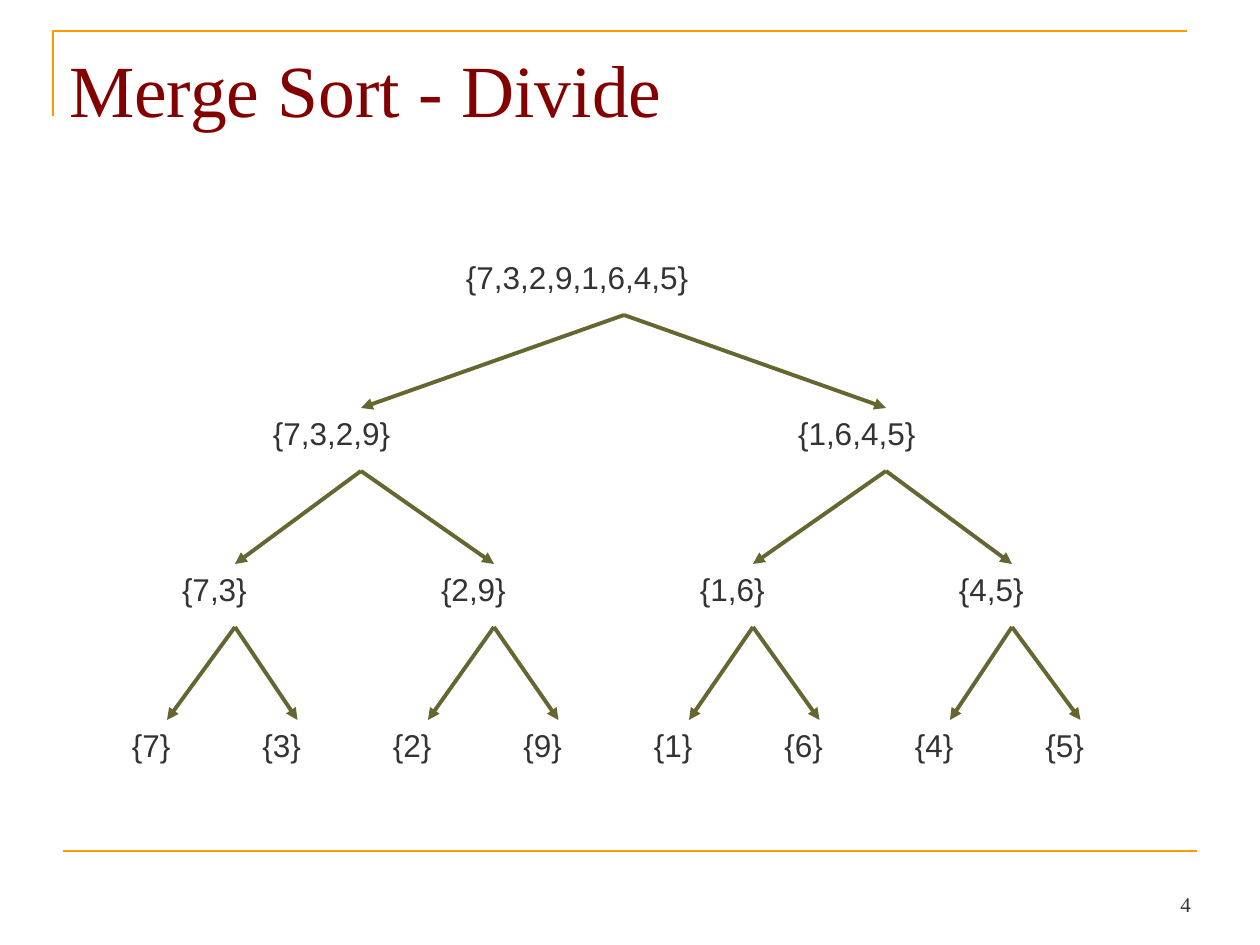
from dataclasses import dataclass

from lxml.etree import SubElement
from pptx import Presentation
from pptx.dml.color import RGBColor
from pptx.enum.shapes import MSO_CONNECTOR
from pptx.enum.text import MSO_ANCHOR, MSO_AUTO_SIZE, PP_ALIGN
from pptx.oxml.ns import qn
from pptx.shapes.connector import Connector
from pptx.slide import Slide
from pptx.text.text import TextFrame
from pptx.util import Emu, Pt

PX_PER_INCH = 126
ORANGE = RGBColor(0xFF, 0x99, 0x00)
MAROON = RGBColor(0x82, 0x00, 0x00)
CHARCOAL = RGBColor(0x33, 0x33, 0x33)
OLIVE = RGBColor(0x66, 0x66, 0x33)

NUMBERS = [7, 3, 2, 9, 1, 6, 4, 5]
FIRST_ROW_TOP = 252
ROW_STEP = 156
ROW_HEIGHT = 48
ARROW_DROP = 63


@dataclass(frozen=True)
class Level:
    group_size: int
    left: int
    joint: int
    step: float
    width: int


LEVELS = [
    Level(8, 460, 624, 0, 237),
    Level(4, 267, 361, 525, 132),
    Level(2, 176, 235, 259, 79),
    Level(1, 126, 167, 130.5, 53),
]


def px(length: float) -> Emu:
    return Emu(round(length * 914400 / PX_PER_INCH))


def format_text(frame: TextFrame, text: str, font_name: str, size: int,
                color: RGBColor, align: PP_ALIGN = PP_ALIGN.LEFT) -> None:
    frame.margin_left = frame.margin_right = px(6)
    frame.margin_top = frame.margin_bottom = px(6)
    frame.text = text
    paragraph = frame.paragraphs[0]
    paragraph.alignment = align
    paragraph.font.name = font_name
    paragraph.font.size = Pt(size)
    paragraph.font.color.rgb = color


def add_label(slide: Slide, left: float, top: int, width: int, height: int) -> TextFrame:
    frame = slide.shapes.add_textbox(px(left), px(top), px(width), px(height)).text_frame
    frame.word_wrap = False
    frame.auto_size = MSO_AUTO_SIZE.SHAPE_TO_FIT_TEXT
    return frame


def add_line(slide: Slide, start: tuple[float, int], end: tuple[float, int],
             color: RGBColor, weight: float) -> Connector:
    line = slide.shapes.add_connector(
        MSO_CONNECTOR.STRAIGHT, *(px(value) for value in start + end))
    line.line.color.rgb = color
    line.line.width = Pt(weight)
    SubElement(line._element.spPr, qn("a:effectLst"))
    return line


def add_arrow(slide: Slide, start: tuple[float, int], end: tuple[float, int]) -> None:
    arrow = add_line(slide, start, end, OLIVE, 2.25)
    SubElement(arrow.line._get_or_add_ln(), qn("a:tailEnd"), type="triangle")


def add_frame(slide: Slide) -> None:
    builder = slide.shapes.build_freeform(px(53), px(116))
    builder.add_line_segments([(px(53), px(31)), (px(1187), px(31))], close=False)
    corner = builder.convert_to_shape()
    corner.shadow.inherit = False
    corner.fill.background()
    corner.line.color.rgb = ORANGE
    corner.line.width = Pt(1.5)
    add_line(slide, (63, 851), (1197, 851), ORANGE, 1.5)


def add_title(slide: Slide) -> None:
    title = slide.shapes.title
    title.left, title.top, title.width, title.height = px(63), px(38), px(1134), px(130)
    title.text_frame.vertical_anchor = MSO_ANCHOR.TOP
    title.text_frame.auto_size = MSO_AUTO_SIZE.NONE
    format_text(title.text_frame, "Merge Sort - Divide", "Times New Roman", 42, MAROON)


def add_level(slide: Slide, depth: int) -> None:
    level = LEVELS[depth]
    top = FIRST_ROW_TOP + depth * ROW_STEP
    for index in range(len(NUMBERS) // level.group_size):
        first = index * level.group_size
        group = NUMBERS[first:first + level.group_size]
        label = add_label(slide, level.left + index * level.step, top, level.width, ROW_HEIGHT)
        format_text(label, "{" + ",".join(map(str, group)) + "}", "Arial", 18, CHARCOAL)
        if depth:
            parent = LEVELS[depth - 1]
            parent_joint = parent.joint + index // 2 * parent.step
            add_arrow(slide, (parent_joint, top - ROW_STEP + ARROW_DROP),
                      (level.joint + index * level.step, top))


def main() -> None:
    presentation = Presentation()
    presentation.slide_width, presentation.slide_height = px(1260), px(945)
    slide = presentation.slides.add_slide(presentation.slide_layouts[5])
    add_frame(slide)
    page_number = add_label(slide, 1173, 888, 24, 35)
    page_number.vertical_anchor = MSO_ANCHOR.BOTTOM
    format_text(page_number, "4", "Times New Roman", 12, CHARCOAL, PP_ALIGN.RIGHT)
    add_title(slide)
    for depth in range(len(LEVELS)):
        add_level(slide, depth)
    presentation.save("out.pptx")


if __name__ == "__main__":
    main()
